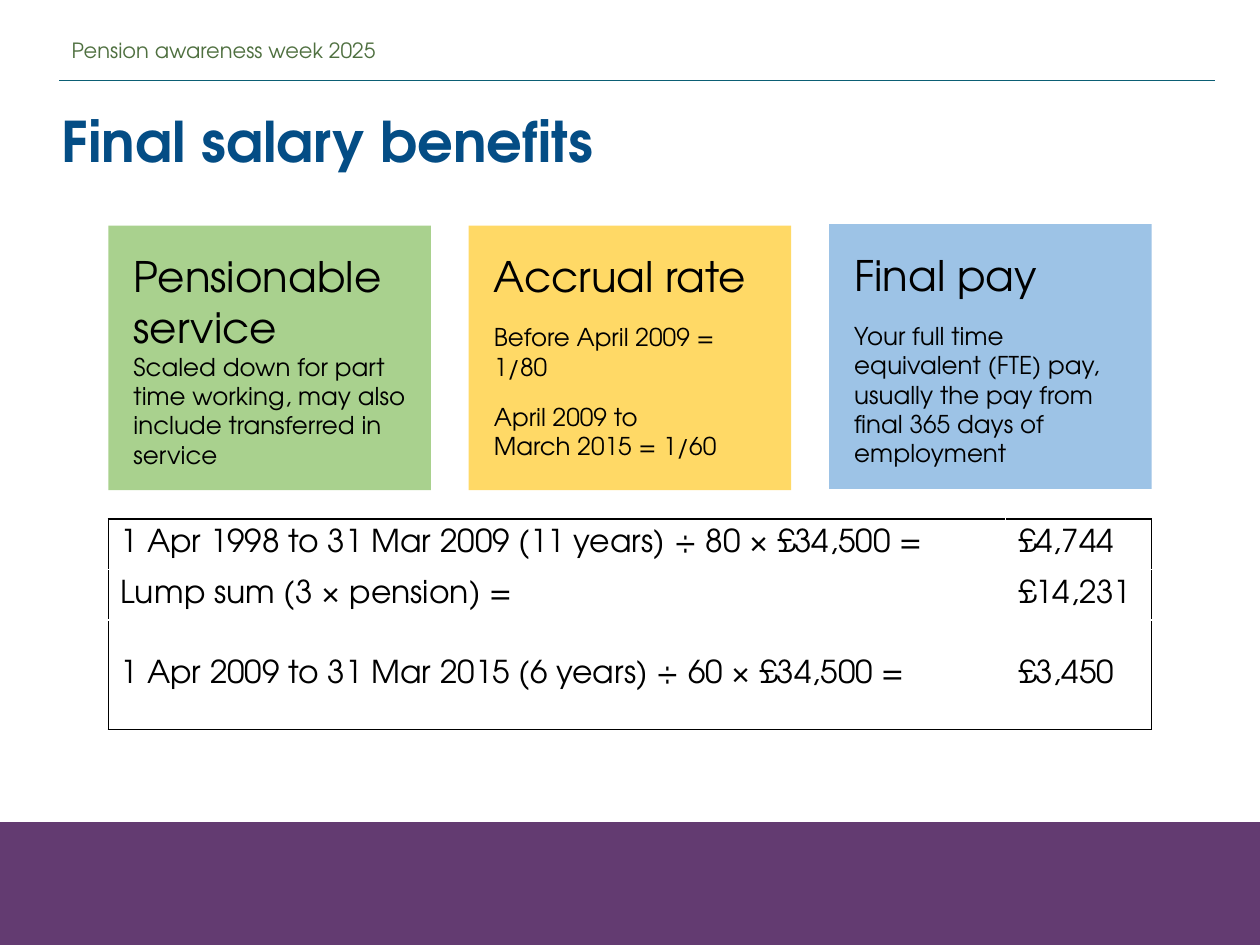
"""Build the final salary benefits slide."""
from copy import deepcopy

from lxml.etree import SubElement
from pptx import Presentation
from pptx.dml.color import RGBColor
from pptx.enum.shapes import MSO_CONNECTOR, MSO_SHAPE
from pptx.enum.text import MSO_ANCHOR, PP_ALIGN
from pptx.oxml.ns import qn
from pptx.util import Inches, Pt

FONT = "TeX Gyre Adventor"
COLORS = {
    "band": "633B71", "rule": "0B5E74", "header": "4F7040", "title": "044D85",
    "text": "000000", "white": "FFFFFF",
    "green": "A9D18E", "yellow": "FFD966", "blue": "9DC3E6",
}
HEADER = "Pension awareness week 2025"
TITLE = "Final salary benefits"
CARDS = [
    ("green", 1.79, "Pensionable service", 0, 0,
     ["Scaled down for part time working, may also include transferred in service"]),
    ("yellow", 1.79, "Accrual rate", 12, 12,
     ["Before April 2009 = 1/80", "April 2009 to\vMarch 2015 = 1/60"]),
    ("blue", 1.78, "Final pay", 12, 0,
     ["Your full time equivalent (FTE) pay, usually the pay from final 365 days of employment"]),
]
SUMS = [
    ("1 Apr 1998 to 31 Mar 2009 (11 years) ÷ 80 × £34,500 =", "£4,744"),
    ("Lump sum (3 × pension) =", "£14,231"),
    ("1 Apr 2009 to 31 Mar 2015 (6 years) ÷ 60 × £34,500 =", "£3,450"),
]
LEFT, CARD_W, CARD_H, CARD_STEP = 0.86, 2.56, 2.1, 2.86
TABLE_TOP, COL_WIDTHS, ROW_HEIGHTS = 4.12, (7.12, 1.16), (0.35, 0.35, 0.87)


def rgb(name):
    return RGBColor.from_string(COLORS[name])


def write(p, text, size, color="text", bold=False):
    p.text = text
    p.alignment = PP_ALIGN.LEFT
    for r in p.runs:
        r.font.name, r.font.size, r.font.bold = FONT, Pt(size), bold
        r.font.color.rgb = rgb(color)
    for br in p._p.findall(qn("a:br")):
        br.append(deepcopy(p.runs[0]._r.rPr))


def add_text(s, box, text, size, color, bold=False):
    tf = s.shapes.add_textbox(*map(Inches, box)).text_frame
    tf.word_wrap = True
    write(tf.paragraphs[0], text, size, color, bold)
    return tf


def add_rect(s, box, color):
    sp = s.shapes.add_shape(MSO_SHAPE.RECTANGLE, *map(Inches, box))
    sp.shadow.inherit = False
    sp.fill.solid()
    sp.fill.fore_color.rgb = rgb(color)
    sp.line.fill.background()
    return sp


def add_card(s, left, card):
    color, top, heading, before, after, body = card
    tf = add_rect(s, (left, top, CARD_W, CARD_H), color).text_frame
    tf.word_wrap = True
    tf.vertical_anchor = MSO_ANCHOR.TOP
    tf.margin_left = tf.margin_right = tf.margin_top = tf.margin_bottom = Inches(0.2)
    write(tf.paragraphs[0], heading, 24)
    for i, text in enumerate(body):
        p = tf.add_paragraph()
        write(p, text, 14)
        p.space_before = Pt(0 if i else before)
        p.space_after = Pt(after)


def add_border(cell, side):
    ln = SubElement(cell._tc.get_or_add_tcPr(), qn(f"a:ln{side}"), w=str(Pt(1)))
    SubElement(SubElement(ln, qn("a:solidFill")), qn("a:srgbClr"), val=COLORS["text"])


def add_sums(s):
    rows, cols = len(SUMS), len(COL_WIDTHS)
    box = (LEFT, TABLE_TOP, sum(COL_WIDTHS), sum(ROW_HEIGHTS))
    table = s.shapes.add_table(rows, cols, *map(Inches, box)).table
    table.first_row = table.horz_banding = False
    for col, width in zip(table.columns, COL_WIDTHS):
        col.width = Inches(width)
    for i, (row, height) in enumerate(zip(table.rows, ROW_HEIGHTS)):
        row.height = Inches(height)
        for j, cell in enumerate(row.cells):
            edges = {"L": j == 0, "R": j == cols - 1, "T": i == 0, "B": i == rows - 1}
            for side, outer in edges.items():
                if outer:
                    add_border(cell, side)
            cell.fill.solid()
            cell.fill.fore_color.rgb = rgb("white")
            cell.vertical_anchor = MSO_ANCHOR.MIDDLE
            write(cell.text_frame.paragraphs[0], SUMS[i][j], 18)


def main():
    prs = Presentation()
    prs.slide_width, prs.slide_height = Inches(10), Inches(7.5)
    s = prs.slides.add_slide(prs.slide_layouts[6])

    band = add_rect(s, (0, 6.53, 10, 0.97), "band")
    band.line.color.rgb = rgb("band")
    band.line.width = Pt(1)

    rule = s.shapes.add_connector(
        MSO_CONNECTOR.STRAIGHT, *map(Inches, (0.47, 0.64, 9.64, 0.64)))
    rule.line.color.rgb = rgb("rule")
    rule.line.width = Pt(0.5)
    SubElement(rule._element.spPr, qn("a:effectLst"))

    header = add_text(s, (0.47, 0.27, 6.51, 0.25), HEADER, 12, "header")
    header.paragraphs[0].line_spacing = 0.9
    add_text(s, (0.39, 0.8, 9.33, 0.64), TITLE, 32, "title", bold=True)

    for i, card in enumerate(CARDS):
        add_card(s, LEFT + i * CARD_STEP, card)
    add_sums(s)
    prs.save("out.pptx")


if __name__ == "__main__":
    main()
